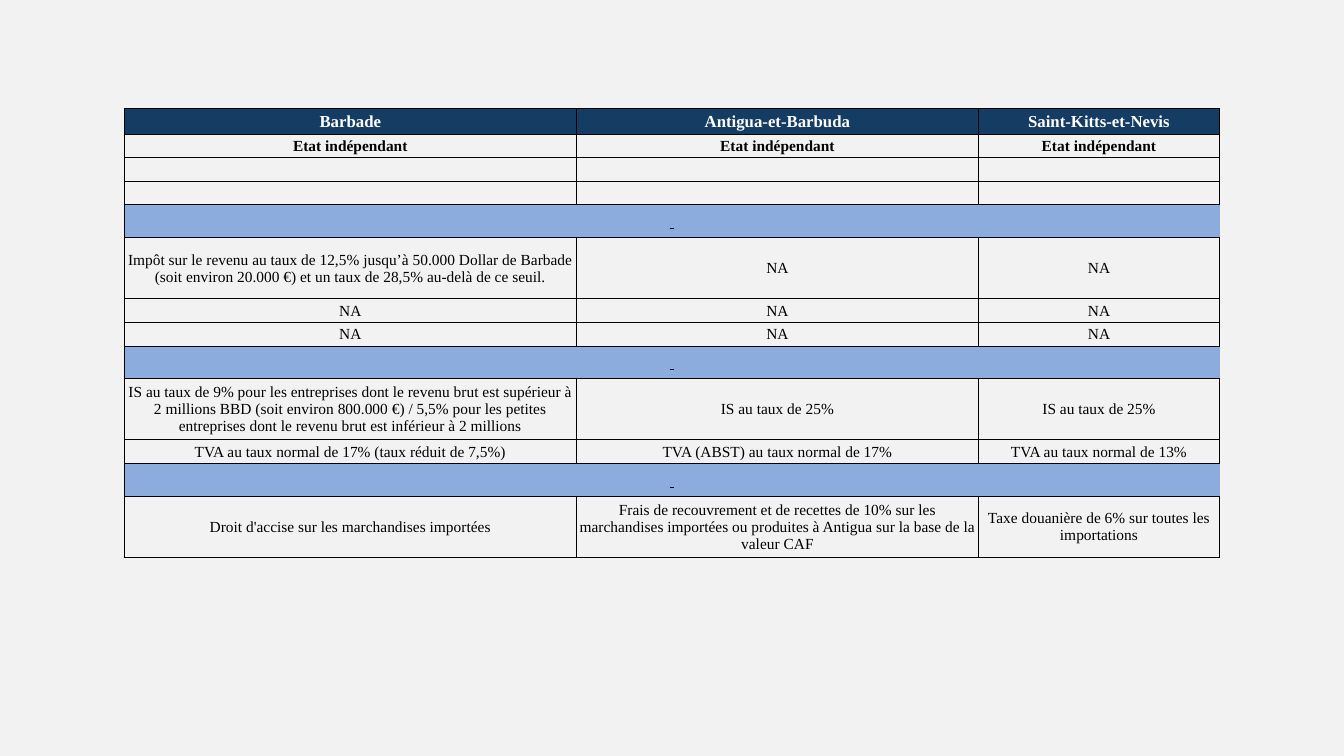
from lxml import etree
from pptx import Presentation
from pptx.dml.color import RGBColor
from pptx.enum import text
from pptx.oxml import ns
from pptx.util import Pt

COLORS = {"page": "F2F2F2", "header": "153D64", "band": "8BACDD",
          "ink": "000000", "light": "FFFFFF"}
FONT = "Times New Roman"
NO_STYLE = "{2D5ABB26-0587-4C30-8999-92F81FD0307C}"
LEFT, TOP = 88.7, 77.5
COL_WIDTHS = [323.1, 287.1, 172.3]

# Row kinds: height and text format
KINDS = {
    "header": {"height": 18.1, "size": 12, "bold": True, "ink": "light", "fill": "header"},
    "status": {"height": 16.9, "size": 11, "bold": True, "ink": "ink", "fill": None},
    "empty": {"height": 16.9, "size": 11, "bold": False, "ink": "ink", "fill": "page"},
    "band": {"height": 23.4, "size": 11, "bold": True, "ink": "ink", "fill": "band"},
    "short": {"height": 16.9, "size": 11, "bold": False, "ink": "ink", "fill": None},
    "tall": {"height": 43.6, "size": 11, "bold": False, "ink": "ink", "fill": None},
}
EMPTY = ("empty", [""] * 3)
BAND = ("band", [" "])  # an underlined no-break space
NOT_APPLICABLE = ("short", ["NA"] * 3)
ROWS = [
    ("header", ["Barbade", "Antigua-et-Barbuda", "Saint-Kitts-et-Nevis"]),
    ("status", ["Etat indépendant"] * 3),
    EMPTY,
    EMPTY,
    BAND,
    ("tall", ["Impôt sur le revenu au taux de 12,5% jusqu’à 50.000 Dollar de Barbade "
              "(soit environ 20.000 €) et un taux de 28,5% au-delà de ce seuil.", "NA", "NA"]),
    NOT_APPLICABLE,
    NOT_APPLICABLE,
    BAND,
    ("tall", ["IS au taux de 9% pour les entreprises dont le revenu brut est supérieur à "
              "2 millions BBD (soit environ 800.000 €) / 5,5% pour les petites "
              "entreprises dont le revenu brut est inférieur à 2 millions",
              "IS au taux de 25%", "IS au taux de 25%"]),
    ("short", ["TVA au taux normal de 17% (taux réduit de 7,5%)",
               "TVA (ABST) au taux normal de 17%", "TVA au taux normal de 13%"]),
    BAND,
    ("tall", ["Droit d'accise sur les marchandises importées",
              "Frais de recouvrement et de recettes de 10% sur les marchandises importées "
              "ou produites à Antigua sur la base de la valeur CAF",
              "Taxe douanière de 6% sur toutes les importations"]),
]


def set_fill(fill, color):
    if color is None:
        fill.background()
    else:
        fill.solid()
        fill.fore_color.rgb = RGBColor.from_string(COLORS[color])


def set_borders(cell, sides):
    """Draw thin lines on the given sides; borders precede the fill."""
    tcPr = cell._tc.get_or_add_tcPr()
    for i, side in enumerate(sides):
        ln = etree.Element(ns.qn(f"a:ln{side}"), w=str(Pt(0.5)))
        solid = etree.SubElement(ln, ns.qn("a:solidFill"))
        etree.SubElement(solid, ns.qn("a:srgbClr"), val=COLORS["ink"])
        tcPr.insert(i, ln)


def write_cell(cell, content, kind):
    style = KINDS[kind]
    margins = {"margin_left": Pt(0.72), "margin_right": Pt(0.72),
               "margin_top": Pt(0.72), "margin_bottom": Pt(0),
               "vertical_anchor": text.MSO_ANCHOR.MIDDLE}
    for name, value in margins.items():
        setattr(cell, name, value)
    set_fill(cell.fill, style["fill"])
    p = cell.text_frame.paragraphs[0]
    p.alignment = text.PP_ALIGN.CENTER
    if not content:
        # Keeps an empty row at its height
        etree.SubElement(p._p, ns.qn("a:endParaRPr"), sz=str(style["size"] * 100))
        return
    r = p.add_run()
    r.text = content
    font = {"name": FONT, "size": Pt(style["size"]), "bold": style["bold"],
            "underline": kind == "band"}
    for name, value in font.items():
        setattr(r.font, name, value)
    r.font.color.rgb = RGBColor.from_string(COLORS[style["ink"]])


def add_tax_table(s):
    heights = [KINDS[kind]["height"] for kind, _ in ROWS]
    frame = s.shapes.add_table(len(ROWS), len(COL_WIDTHS), Pt(LEFT), Pt(TOP),
                               Pt(sum(COL_WIDTHS)), Pt(sum(heights)))
    table = frame.table
    table.first_row = table.horz_banding = False
    table._tbl.tblPr.find(ns.qn("a:tableStyleId")).text = NO_STYLE
    for column, width in zip(table.columns, COL_WIDTHS):
        column.width = Pt(width)
    for i, (kind, contents) in enumerate(ROWS):
        table.rows[i].height = Pt(heights[i])
        if kind == "band":
            table.cell(i, 0).merge(table.cell(i, len(COL_WIDTHS) - 1))
        for j, content in enumerate(contents):
            cell = table.cell(i, j)
            write_cell(cell, content, kind)
            set_borders(cell, "LTB" if kind == "band" else "LRTB")


def main():
    prs = Presentation()
    prs.slide_width, prs.slide_height = Pt(960), Pt(540)
    s = prs.slides.add_slide(prs.slide_layouts[6])
    set_fill(s.background.fill, "page")

    # Comparison of taxes by state
    add_tax_table(s)
    prs.save("out.pptx")


if __name__ == "__main__":
    main()
